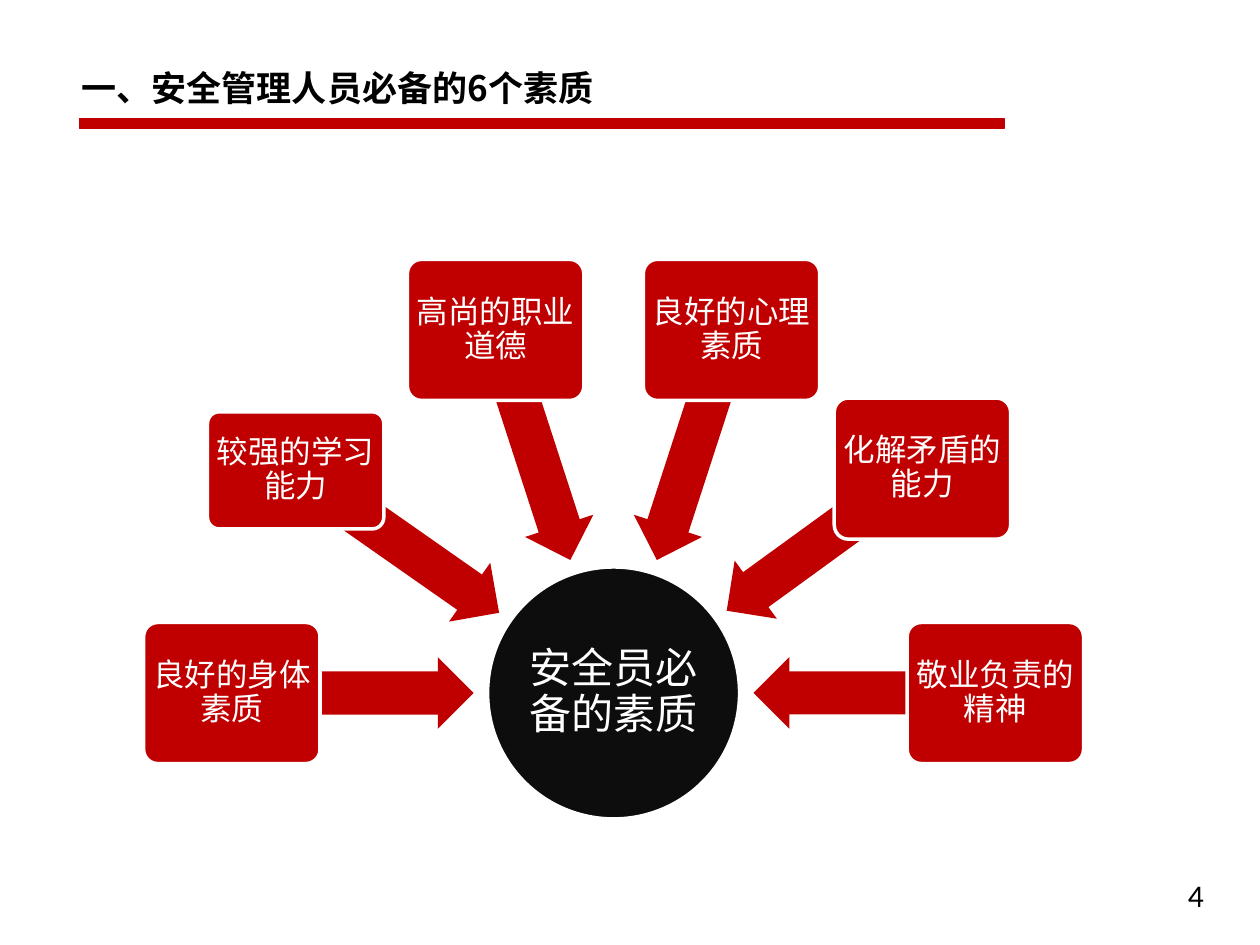
"""Build a slide of six qualities pointing at a central hub."""
from math import cos, radians, sin

from lxml.etree import SubElement
from pptx import Presentation
from pptx.dml.color import RGBColor
from pptx.enum.shapes import MSO_SHAPE as SHAPE
from pptx.enum.text import MSO_ANCHOR as ANCHOR, PP_ALIGN as ALIGN
from pptx.oxml.ns import qn
from pptx.util import Inches, Pt

RED = RGBColor(0xC0, 0x00, 0x00)
INK = RGBColor(0x0D, 0x0D, 0x0D)
BLACK = RGBColor(0x00, 0x00, 0x00)
WHITE = RGBColor(0xFF, 0xFF, 0xFF)
CJK = "Noto Sans CJK SC"
WIDTH, HEIGHT = Inches(10), Inches(7.5)

HUB_X, HUB_Y, HUB_SIZE = 48.7, 55, 20
ARROW_TIP, ARROW_H = 11.1, 5.7
BOX_W, BOX_H, RADIUS = 14, 11.2, 30.3
QUALITIES = [
    ("良好的身体素质", 180, RADIUS, BOX_H),
    ("较强的学习能力", 215, 30.8, 9.3),
    ("高尚的职业道德", 252, RADIUS, BOX_H),
    ("良好的心理素质", 288, RADIUS, BOX_H),
    ("化解矛盾的能力", 324, RADIUS, BOX_H),
    ("敬业负责的精神", 360, RADIUS, BOX_H),
]


def pct(n):
    """Return n percent of the slide width."""
    return round(WIDTH * n / 100)


def polar(angle, radius):
    """Return the point at an angle and distance from the hub centre."""
    a = radians(angle)
    return HUB_X + radius * cos(a), HUB_Y + radius * sin(a)


def write(sp, text, size=18, font=CJK, color=WHITE, bold=False, align=ALIGN.CENTER,
          anchor=ANCHOR.MIDDLE, spacing=0.9, before=0, after=0, inset=None):
    """Put one formatted paragraph into a shape."""
    tf = sp.text_frame
    tf.word_wrap = True
    tf.vertical_anchor = anchor
    if inset is not None:
        tf.margin_left = tf.margin_right = tf.margin_top = tf.margin_bottom = pct(inset)
    p = tf.paragraphs[0]
    p.alignment, p.line_spacing = align, spacing
    p.space_before, p.space_after = Pt(before), Pt(after)
    r = p.add_run()
    r.text = text
    r.font.size, r.font.name, r.font.bold = Pt(size), font, bold
    r.font.color.rgb = color
    SubElement(r.font._element, qn("a:ea")).set("typeface", font)


def add_label(s, box, text, **style):
    """Add a text box given in percent of the slide width."""
    write(s.shapes.add_textbox(*map(pct, box)), text,
          align=ALIGN.LEFT, anchor=ANCHOR.TOP, color=BLACK, **style)


def add_centred(s, kind, centre, w, h, fill, line=None, line_width=2):
    """Add a preset shape around its centre point."""
    x, y = centre
    sp = s.shapes.add_shape(kind, pct(x - w / 2), pct(y - h / 2), pct(w), pct(h))
    sp.shadow.inherit = False
    sp.fill.solid()
    sp.fill.fore_color.rgb = fill
    if line is None:
        sp.line.fill.background()
    else:
        sp.line.color.rgb = line
        sp.line.width = Pt(line_width)
    return sp


def add_hub(s, text):
    """Add the central circle."""
    sp = add_centred(s, SHAPE.OVAL, (HUB_X, HUB_Y), HUB_SIZE, HUB_SIZE, INK, WHITE)
    write(sp, text, size=24, after=8.4, inset=0.2)


def add_quality(s, text, angle, radius, height):
    """Add a box and the arrow from it to the hub."""
    length = radius - ARROW_TIP
    arrow = add_centred(s, SHAPE.LEFT_ARROW, polar(angle, ARROW_TIP + length / 2),
                        length, ARROW_H, RED)
    arrow.adjustments[0], arrow.adjustments[1] = 0.6, 0.5
    arrow.rotation = angle % 360
    box = add_centred(s, SHAPE.ROUNDED_RECTANGLE, polar(angle, radius),
                      BOX_W, height, RED, WHITE)
    box.adjustments[0] = 0.1
    write(box, text, after=6.3, inset=0.3)


def main():
    """Build and save the slide."""
    prs = Presentation()
    prs.slide_width, prs.slide_height = WIDTH, HEIGHT
    s = prs.slides.add_slide(prs.slide_layouts[6])
    add_label(s, (93.3, 69, 6.3, 4), "4", font="Calibri", spacing=1)
    add_centred(s, SHAPE.RECTANGLE, (43, 9.8), 73.4, 0.8, RED, RED, 0.75)
    add_label(s, (5.5, 3.1, 57.7, 5.5), "一、安全管理人员必备的6个素质",
              size=20, bold=True, spacing=1.5, before=4)
    add_hub(s, "安全员必备的素质")
    for quality in QUALITIES:
        add_quality(s, *quality)
    prs.save("out.pptx")


if __name__ == "__main__":
    main()
